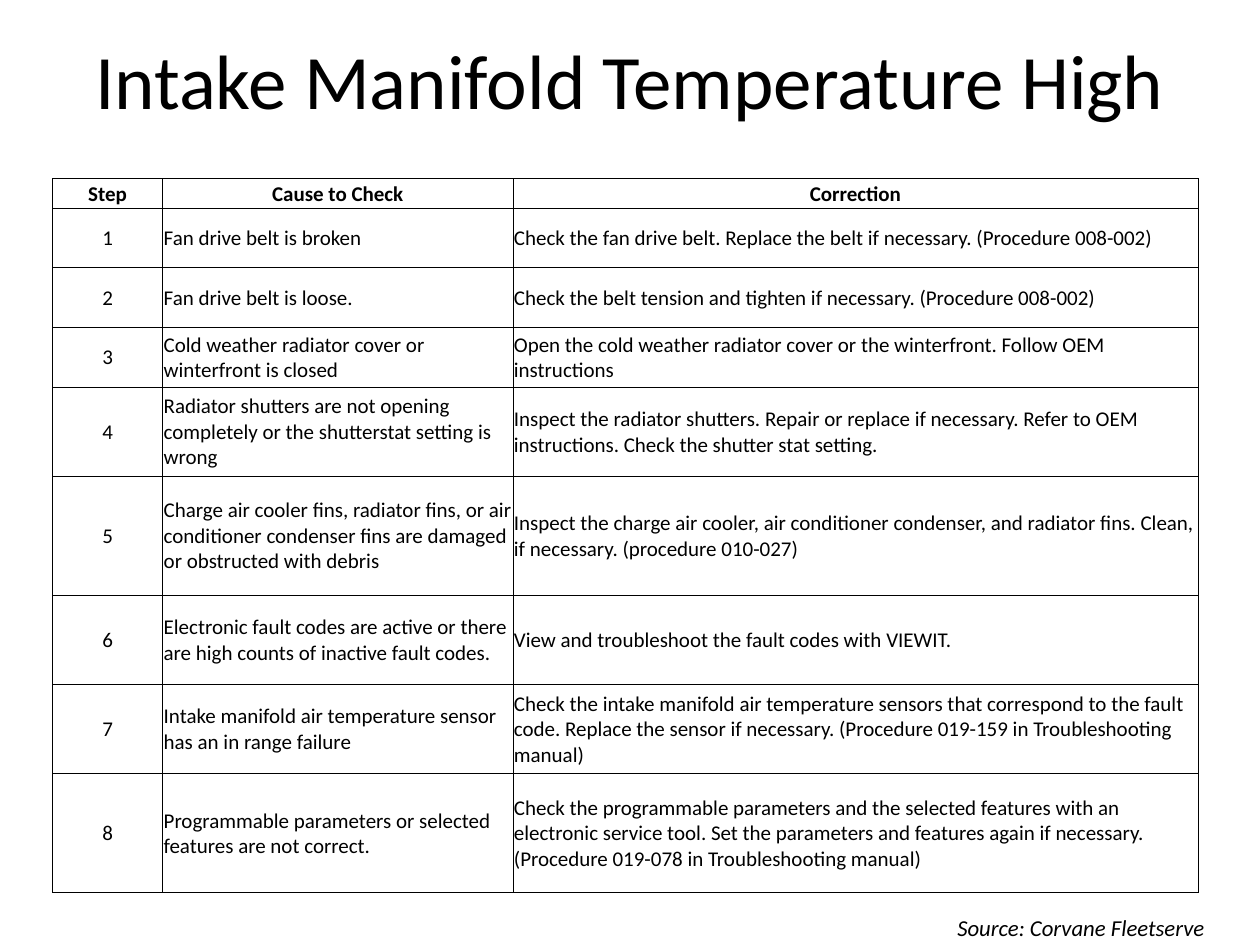
from lxml.etree import SubElement
from pptx import Presentation
from pptx.dml.color import RGBColor
from pptx.enum.text import MSO_ANCHOR as Anchor, PP_ALIGN as Align
from pptx.oxml.ns import qn
from pptx.util import Cm, Pt

COLORS = {"text": "000000", "border": "000000"}
FONT = "Calibri"
ROW_UNIT = 0.6
ROW_UNITS = [1, 2, 2, 2, 3, 4, 3, 3, 4]
COL_WIDTHS = [2.22, 7.06, 13.81]
HEADERS = ["Step", "Cause to Check", "Correction"]
CHECKS = [
    ("Fan drive belt is broken",
     "Check the fan drive belt. Replace the belt if necessary. (Procedure 008-002)"),
    ("Fan drive belt is loose.",
     "Check the belt tension and tighten if necessary. (Procedure 008-002)"),
    ("Cold weather radiator cover or winterfront is closed",
     "Open the cold weather radiator cover or the winterfront. Follow OEM instructions"),
    ("Radiator shutters are not opening completely or the shutterstat setting is wrong",
     "Inspect the radiator shutters. Repair or replace if necessary. Refer to OEM "
     "instructions. Check the shutter stat setting."),
    ("Charge air cooler fins, radiator fins, or air conditioner condenser fins are "
     "damaged or obstructed with debris",
     "Inspect the charge air cooler, air conditioner condenser, and radiator fins. "
     "Clean, if necessary. (procedure 010-027)"),
    ("Electronic fault codes are active or there are high counts of inactive fault codes.",
     "View and troubleshoot the fault codes with VIEWIT."),
    ("Intake manifold air temperature sensor has an in range failure",
     "Check the intake manifold air temperature sensors that correspond to the fault "
     "code. Replace the sensor if necessary. (Procedure 019-159 in Troubleshooting manual)"),
    ("Programmable parameters or selected features are not correct.",
     "Check the programmable parameters and the selected features with an electronic "
     "service tool. Set the parameters and features again if necessary. "
     "(Procedure 019-078 in Troubleshooting manual)"),
]


def set_attrs(obj, values):
    for name, value in values.items():
        setattr(obj, name, value)


def write_text(tf, text, align, **font):
    p = tf.paragraphs[0]
    p.alignment = align
    r = p.add_run()
    r.text = text
    set_attrs(r.font, {"name": FONT, **font})
    r.font.color.rgb = RGBColor.from_string(COLORS["text"])


def add_text(slide, box, text, anchor, align, **font):
    sp = slide.shapes.add_textbox(*map(Cm, box))
    set_attrs(sp.text_frame, {"word_wrap": True, "vertical_anchor": anchor})
    write_text(sp.text_frame, text, align, **font)


def add_borders(cell):
    tc_pr = cell._tc.get_or_add_tcPr()
    for side in ("lnL", "lnR", "lnT", "lnB"):
        ln = SubElement(tc_pr, qn(f"a:{side}"), w=str(Pt(0.5)))
        fill = SubElement(ln, qn("a:solidFill"))
        SubElement(fill, qn("a:srgbClr"), val=COLORS["border"])


def format_cell(cell, text, align, bold):
    set_attrs(cell, {
        "margin_left": Cm(0.02), "margin_right": Cm(0.02),
        "margin_top": Cm(0.02), "margin_bottom": 0,
        "vertical_anchor": Anchor.MIDDLE,
    })
    write_text(cell.text_frame, text, align, size=Pt(12), bold=bold)
    add_borders(cell)
    cell.fill.background()


def add_check_table(slide, left, top):
    rows = [HEADERS] + [(str(n), *check) for n, check in enumerate(CHECKS, 1)]
    table = slide.shapes.add_table(
        len(rows), len(HEADERS), Cm(left), Cm(top),
        Cm(sum(COL_WIDTHS)), Cm(ROW_UNIT * sum(ROW_UNITS))).table
    set_attrs(table, {"first_row": False, "horz_banding": False})
    for column, width in zip(table.columns, COL_WIDTHS):
        column.width = Cm(width)
    for row, units in zip(table.rows, ROW_UNITS):
        row.height = Cm(ROW_UNIT * units)
    for i, row in enumerate(rows):
        for j, text in enumerate(row):
            align = Align.CENTER if i == 0 or j == 0 else Align.LEFT
            format_cell(table.cell(i, j), text, align, bold=i == 0)


def main():
    prs = Presentation()
    set_attrs(prs, {"slide_width": Cm(25.4), "slide_height": Cm(19.05)})
    slide = prs.slides.add_slide(prs.slide_layouts[6])
    add_text(slide, (1.27, 0, 22.86, 3.18), "Intake Manifold Temperature High",
             Anchor.MIDDLE, Align.CENTER, size=Pt(44))
    add_check_table(slide, 1.06, 3.6)
    add_text(slide, (19.05, 18.29, 6.35, 0.81), "Source: Corvane Fleetserve",
             Anchor.TOP, Align.LEFT, size=Pt(13), italic=True)
    prs.save("out.pptx")


if __name__ == "__main__":
    main()
